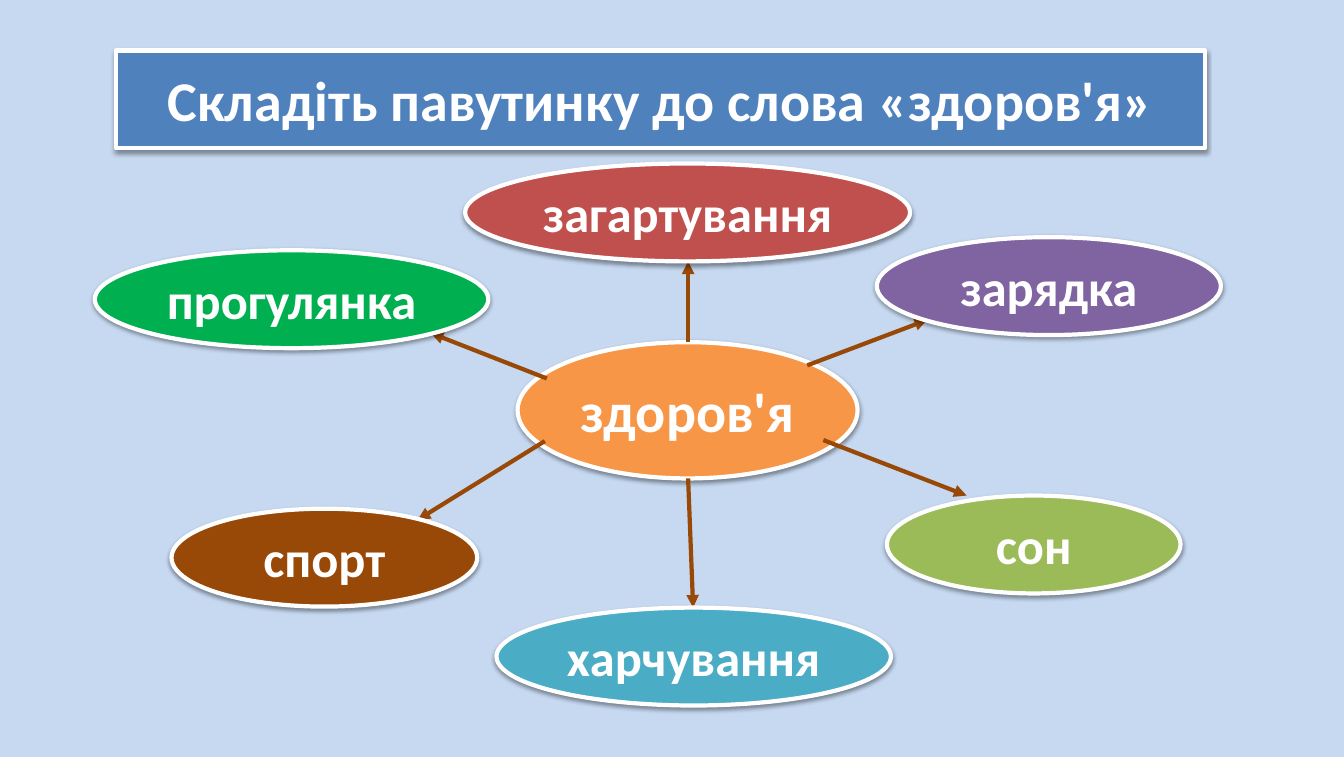
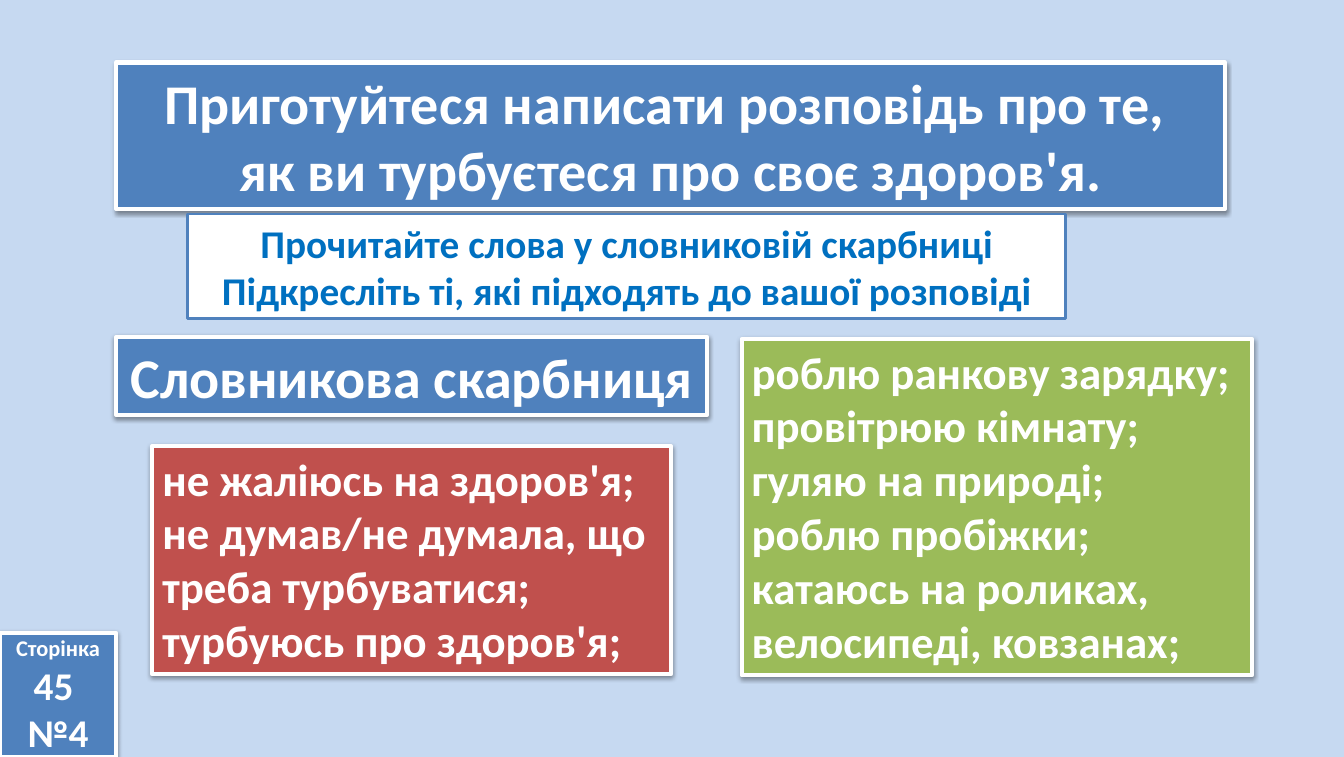
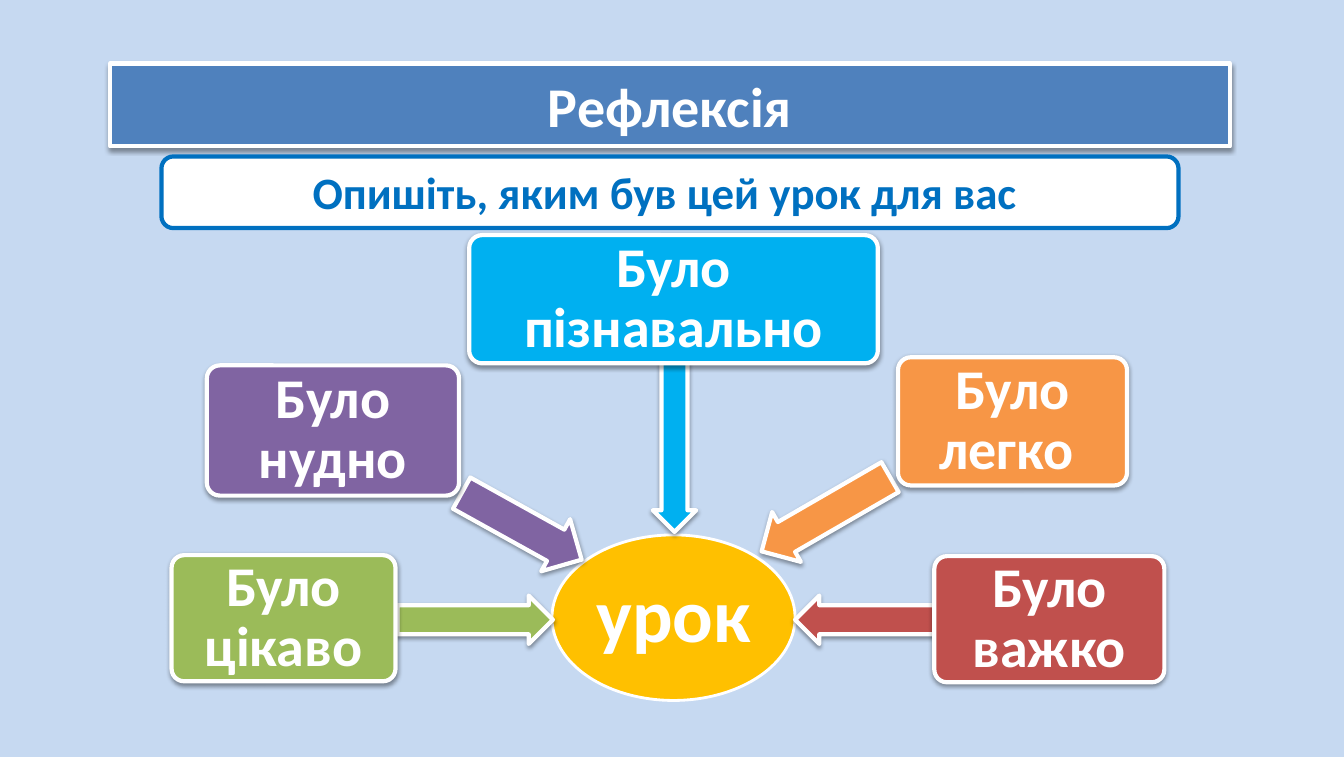
from dataclasses import dataclass

from lxml import etree
from pptx import Presentation
from pptx import util as u
from pptx.dml import color
from pptx.enum import shapes, text
from pptx.oxml import ns

PX = 9144
FONT = "Calibri"
WHITE, SKY, BLUE, INK = "FFFFFF", "C6D9F1", "4F81BD", "0070C0"
RED, GREEN, PURPLE, ORANGE, BROWN = "C0504D", "9BBB59", "8064A2", "F79646", "984807"
KIND = shapes.MSO_SHAPE
CENTER, LEFT = text.PP_ALIGN.CENTER, text.PP_ALIGN.LEFT
MIDDLE, TOP = text.MSO_ANCHOR.MIDDLE, text.MSO_ANCHOR.TOP
Area = tuple[int, int, int, int]


@dataclass(frozen=True)
class Panel:
    words: str
    area: Area
    fill: str = BLUE
    size: int = 40
    kind: int = KIND.RECTANGLE
    ink: str = WHITE
    edge: str = WHITE
    weight: int = 3
    align: int = CENTER
    anchor: int = MIDDLE
    shadow: bool = True
    corner: float | None = None
    inset: int | None = None
    spacing: float | None = None


@dataclass(frozen=True)
class Ray:
    start: tuple[int, int]
    end: tuple[int, int]


@dataclass(frozen=True)
class Answer:
    words: str
    area: Area
    fill: str
    arrow: Area
    angle: int


def px(length: int) -> int:
    return u.Emu(length * PX)


def paint(value: str) -> color.RGBColor:
    return color.RGBColor.from_string(value)


def style_surface(box, fill: str, edge: str, weight: int, shadow: bool) -> None:
    box.fill.solid()
    box.fill.fore_color.rgb = paint(fill)
    box.line.color.rgb = paint(edge)
    box.line.width = u.Pt(weight)
    box.shadow.inherit = False
    if shadow:
        effects = box._element.spPr.find(ns.qn("a:effectLst"))
        outer = etree.SubElement(effects, ns.qn("a:outerShdw"), blurRad="40000",
                                 dist="20000", dir="5400000", rotWithShape="0")
        black = etree.SubElement(outer, ns.qn("a:srgbClr"), val="000000")
        etree.SubElement(black, ns.qn("a:alpha"), val="38000")


def format_panel(box, panel: Panel) -> None:
    box.left, box.top, box.width, box.height = map(px, panel.area)
    style_surface(box, panel.fill, panel.edge, panel.weight, panel.shadow)
    if panel.corner is not None:
        box.adjustments[0] = panel.corner
    frame = box.text_frame
    frame.text = panel.words
    frame.word_wrap = True
    frame.auto_size = text.MSO_AUTO_SIZE.NONE
    frame.vertical_anchor = panel.anchor
    if panel.inset is not None:
        frame.margin_left = frame.margin_right = px(panel.inset)
        frame.margin_top = frame.margin_bottom = px(panel.inset)
    for para in frame.paragraphs:
        para.alignment = panel.align
        para.space_before = u.Pt(0)
        if panel.spacing is not None:
            para.line_spacing = panel.spacing
        if box.is_placeholder:
            props = para._p.get_or_add_pPr()
            props.set("marL", "0")
            props.set("indent", "0")
            etree.SubElement(props, ns.qn("a:buNone"))
        font = para.font
        font.name, font.size, font.bold = FONT, u.Pt(panel.size), True
        font.color.rgb = paint(panel.ink)


def add_panel(page, panel: Panel):
    box = page.shapes.add_shape(panel.kind, *map(px, panel.area))
    format_panel(box, panel)
    return box


def add_page(deck, layout: int, title: Panel):
    page = deck.slides.add_slide(deck.slide_layouts[layout])
    format_panel(page.shapes.title, title)
    return page


def add_ray(page, ray: Ray) -> None:
    line = page.shapes.add_connector(shapes.MSO_CONNECTOR.STRAIGHT,
                                     *map(px, ray.start + ray.end))
    line.line.color.rgb = paint(BROWN)
    line.line.width = u.Pt(3)
    props = line._element.spPr
    etree.SubElement(props.find(ns.qn("a:ln")), ns.qn("a:tailEnd"), type="triangle")
    etree.SubElement(props, ns.qn("a:effectLst"))


def add_answer(page, answer: Answer) -> None:
    arrow = page.shapes.add_shape(KIND.LEFT_ARROW, *map(px, answer.arrow))
    arrow.rotation = answer.angle
    arrow.adjustments[0], arrow.adjustments[1] = 0.6, 0.5
    style_surface(arrow, answer.fill, WHITE, 3, True)
    add_panel(page, Panel(answer.words, answer.area, answer.fill,
                          kind=KIND.ROUNDED_RECTANGLE, corner=0.1, inset=8, spacing=0.9))


def build_word_web(deck) -> None:
    page = add_page(deck, 5, Panel("Складіть павутинку до слова «здоров'я»",
                                   (115, 50, 1079, 97)))
    add_panel(page, Panel("здоров'я", (513, 339, 337, 135), ORANGE, kind=KIND.OVAL))
    for ray in (
        Ray((816, 436), (958, 491)),
        Ray((800, 362), (919, 317)),
        Ray((682, 339), (682, 259)),
        Ray((542, 375), (427, 330)),
        Ray((540, 437), (414, 515)),
        Ray((682, 474), (687, 602)),
    ):
        add_ray(page, ray)
    for words, left, top, width, fill in (
        ("прогулянка", 94, 248, 390, "00B050"),
        ("загартування", 461, 162, 441, RED),
        ("спорт", 170, 504, 303, BROWN),
        ("харчування", 492, 602, 391, "4BACC6"),
        ("зарядка", 869, 235, 341, PURPLE),
        ("сон", 879, 491, 291, GREEN),
    ):
        add_panel(page, Panel(words, (left, top, width, 97), fill, 36, KIND.OVAL))


def build_vocabulary(deck) -> None:
    page = add_page(deck, 3, Panel(
        "Приготуйтеся написати розповідь про те, \nяк ви турбуєтеся про своє здоров'я.",
        (115, 62, 1099, 145)))
    lists = (
        Panel("не жаліюсь на здоров'я;\nне думав/не думала, що треба турбуватися;\n"
              "турбуюсь про здоров'я;",
              (151, 442, 514, 226), RED, 32, align=LEFT, anchor=TOP),
        Panel("роблю ранкову зарядку;\nпровітрюю кімнату;\nгуляю на природі;\n"
              "роблю пробіжки;\nкатаюсь на роликах, велосипеді, ковзанах;",
              (735, 336, 506, 333), GREEN, 32, align=LEFT, anchor=TOP),
    )
    for index, panel in enumerate(lists, start=1):
        format_panel(page.placeholders[index], panel)
    add_panel(page, Panel(
        "Прочитайте слова у словниковій скарбниці\n"
        "Підкресліть ті, які підходять до вашої розповіді",
        (186, 212, 870, 104), WHITE, 28, ink=INK, edge=BLUE, weight=2,
        anchor=TOP, shadow=False))
    badge = add_panel(page, Panel("Сторінка\n45 \n№4", (0, 627, 115, 123), size=28))
    badge.text_frame.paragraphs[0].font.size = u.Pt(16)
    add_panel(page, Panel("Словникова скарбниця", (115, 334, 586, 77), anchor=TOP))


def build_reflection(deck) -> None:
    page = add_page(deck, 5, Panel("Рефлексія", (109, 63, 1110, 82)))
    add_panel(page, Panel("урок", (547, 530, 241, 164), "FFC000", 54, KIND.OVAL,
                          weight=2, shadow=False, inset=4, spacing=0.9))
    for answer in (
        Answer("Було цікаво", (170, 550, 222, 125), GREEN, (394, 590, 154, 48), 180),
        Answer("Було нудно", (205, 362, 250, 129), PURPLE, (449, 492, 136, 59), 209),
        Answer("Було пізнавально", (465, 233, 405, 127), "00B0F0", (580, 417, 177, 43), 270),
        Answer("Було легко ", (890, 354, 227, 127), ORANGE, (745, 481, 147, 57), 330),
        Answer("Було важко", (926, 551, 228, 125), RED, (788, 590, 238, 48), 0),
    ):
        add_answer(page, answer)
    add_panel(page, Panel("Опишіть, яким був цей урок для вас ", (160, 155, 1008, 71),
                          WHITE, 32, KIND.ROUNDED_RECTANGLE, INK, INK,
                          anchor=TOP, shadow=False))


def main() -> None:
    deck = Presentation()
    deck.slide_width, deck.slide_height = px(1332), px(750)
    backdrop = deck.slide_master.background.fill
    backdrop.solid()
    backdrop.fore_color.rgb = paint(SKY)
    build_word_web(deck)
    build_vocabulary(deck)
    build_reflection(deck)
    deck.save("out.pptx")


if __name__ == "__main__":
    main()
